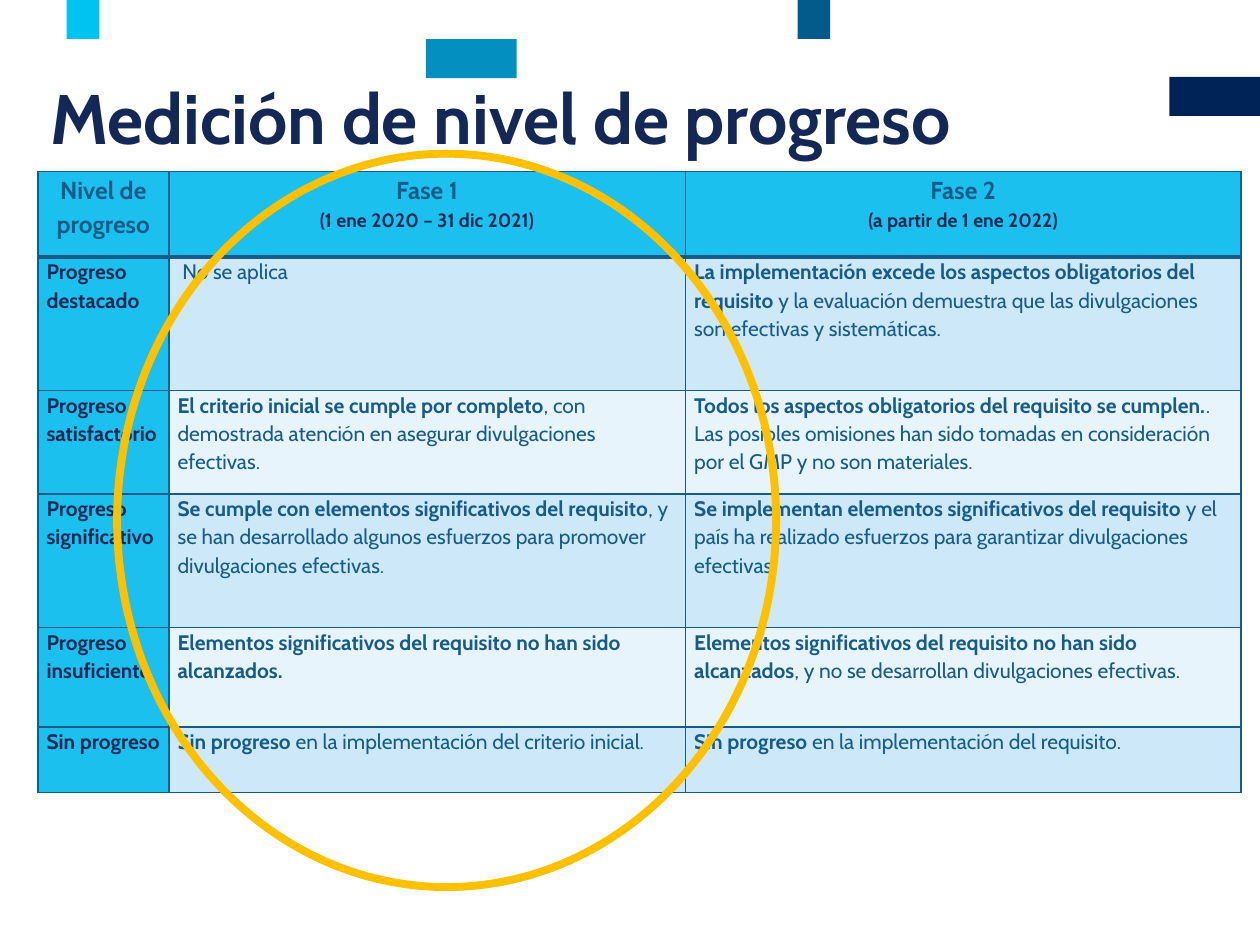
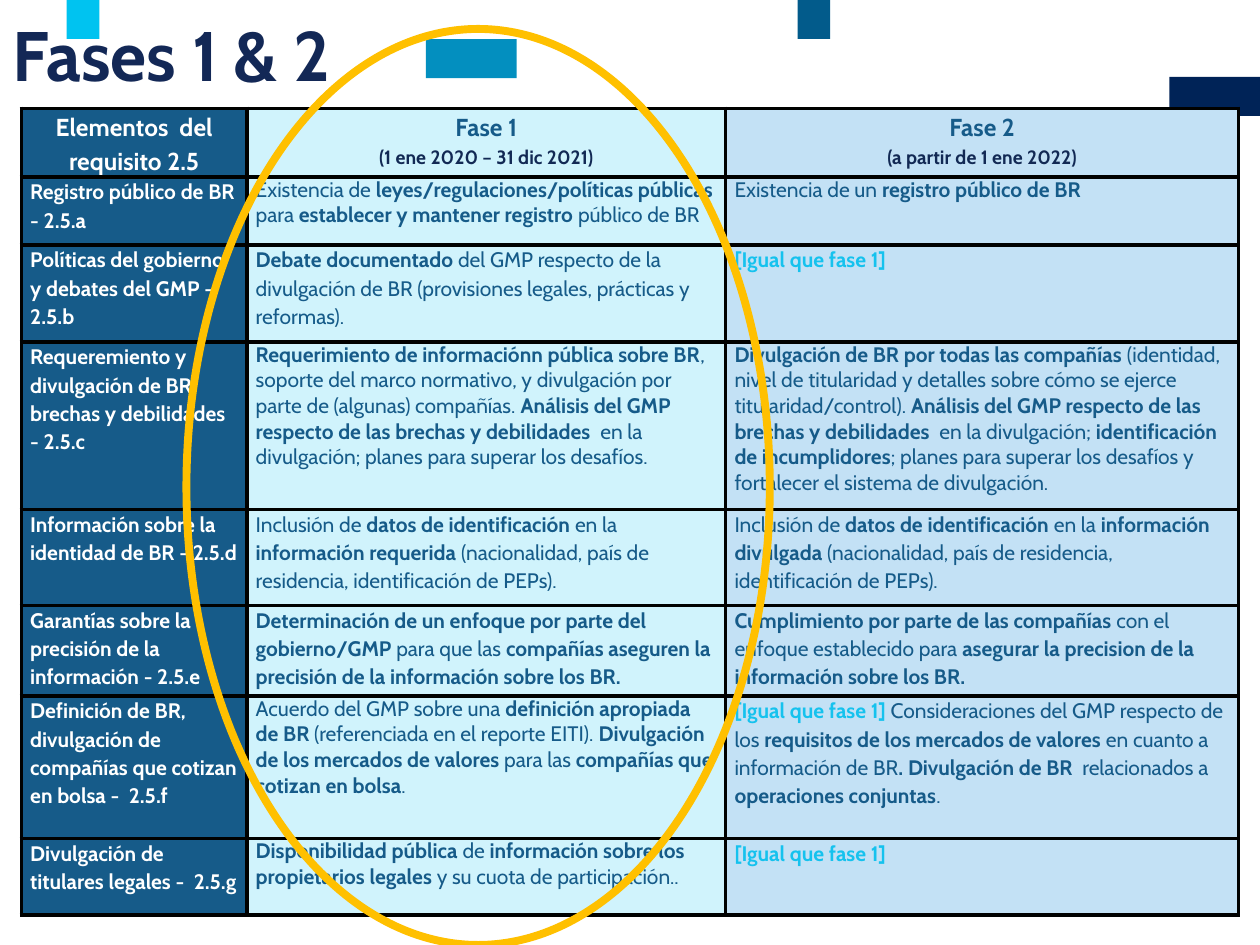
from pptx import Presentation
from pptx.util import Inches, Pt
from pptx.dml.color import RGBColor
from pptx.enum.shapes import MSO_SHAPE
from pptx.enum.text import PP_ALIGN, MSO_ANCHOR, MSO_AUTO_SIZE
from pptx.oxml.ns import qn
from lxml.etree import SubElement

FONT = "Cabin"
COLORS = {
    "title": "132856", "navy": "122954", "blue": "165B89", "cyan": "1CC0EE",
    "same": "15C2EE", "white": "FFFFFF", "black": "000100", "ring": "FFC000",
    "dark": "CDE8F8", "light": "E8F4FC", "phase1": "D0F3FC", "phase2": "C3E1F5",
    "band1": "002357", "band2": "025B8B", "band3": "038FBF", "band4": "00C3F0",
}
# Colour, left, top and width of the blocks at the top of every slide
BANDS = [("band1", 9.28, 0.61, 0.72), ("band2", 6.33, 0, 0.26),
         ("band3", 3.38, 0.31, 0.72), ("band4", 0.53, 0, 0.26)]
PHASES = ["Fase 1\n(1 ene 2020 – 31 dic 2021)", "Fase 2\n(a partir de 1 ene 2022)"]

# Bold passages stand between double asterisks
LEVELS = [
    ["Nivel de progreso", *PHASES],
    ["**Progreso destacado**", " No se aplica",
     "**La implementación excede los aspectos obligatorios del requisito **y la "
     "evaluación demuestra que las divulgaciones son efectivas y sistemáticas."],
    ["**Progreso satisfactorio**",
     "**El criterio inicial se cumple por completo**, con demostrada atención en "
     "asegurar divulgaciones efectivas.",
     "**Todos los aspectos obligatorios del requisito se cumplen.**. Las posibles "
     "omisiones han sido tomadas en consideración por el GMP y no son materiales."],
    ["**Progreso significativo**",
     "**Se cumple con elementos significativos del requisito**, y se han "
     "desarrollado algunos esfuerzos para promover divulgaciones efectivas.",
     "**Se implementan elementos significativos del requisito **y el país ha "
     "realizado esfuerzos para garantizar divulgaciones efectivas."],
    ["**Progreso insuficiente**",
     "**Elementos significativos del requisito no han sido alcanzados.**",
     "**Elementos significativos del requisito no han sido alcanzados**, y no se "
     "desarrollan divulgaciones efectivas."],
    ["**Sin progreso**",
     "**Sin progreso **en la implementación del criterio inicial.",
     "**Sin progreso **en la implementación del requisito."],
]
ITEMS = [
    ["Elementos  del requisito 2.5", *PHASES],
    ["**Registro público de BR - 2.5.a**",
     "Existencia de **leyes/regulaciones/políticas públicas **para **establecer y "
     "mantener registro **público de BR",
     "Existencia de un **registro público de BR**"],
    ["**Políticas del gobierno y debates del GMP - 2.5.b**",
     "**Debate documentado **del GMP respecto de la divulgación de BR "
     "(provisiones legales, prácticas y reformas).",
     "**[Igual que fase 1]**"],
    ["**Requeremiento y divulgación de BR: brechas y debilidades**\n**- 2.5.c**",
     "**Requerimiento de informaciónn pública sobre BR**, soporte del marco "
     "normativo, y divulgación por parte de (algunas) compañías. **Análisis del GMP "
     "respecto de las brechas y debilidades  **en la divulgación; planes para "
     "superar los desafíos.",
     "**Divulgación de BR por todas las compañías **(identidad, nivel de "
     "titularidad y detalles sobre cómo se ejerce titularidad/control). **Análisis "
     "del GMP respecto de las brechas y debilidades  **en la divulgación; "
     "**identificación de incumplidores**; planes para superar los desafíos y "
     "fortalecer el sistema de divulgación."],
    ["**Información sobre la identidad de BR - 2.5.d**",
     "Inclusión de **datos de identificación **en la **información requerida "
     "**(nacionalidad, país de residencia, identificación de PEPs).",
     "Inclusión de **datos de identificación **en la **información divulgada "
     "**(nacionalidad, país de residencia, identificación de PEPs)."],
    ["**Garantías sobre la precisión de la información - 2.5.e**",
     "**Determinación de un enfoque por parte del gobierno/GMP **para que las "
     "**compañías aseguren la precisión de la información sobre los BR.**",
     "**Cumplimiento por parte de las compañías **con el enfoque establecido para "
     "**asegurar la precision de la información sobre los BR.**"],
    ["**Definición de BR, divulgación de compañías que cotizan en bolsa -  2.5.f**",
     "Acuerdo del GMP sobre una **definición apropiada de BR** (referenciada en el "
     "reporte EITI). **Divulgación de los mercados de valores** para las "
     "**compañías que cotizan en bolsa**.",
     "**[Igual que fase 1] **Consideraciones del GMP respecto de los **requisitos "
     "de los mercados de valores **en cuanto a información de BR**. Divulgación de "
     "BR  **relacionados a **operaciones conjuntas**."],
    ["**Divulgación de titulares legales -  2.5.g**",
     "**Disponibilidad pública **de **información sobre los propietarios legales "
     "**y su cuota de participación..",
     "**[Igual que fase 1]**"],
]
# Cells of the second table set with single line spacing
TIGHT = {(1, 1), (1, 2), (3, 1), (3, 2), (6, 1), (7, 1)}


def rgb(name):
    return RGBColor.from_string(COLORS[name])


def write(para, text, size=12, color="blue", bold=False, align=PP_ALIGN.LEFT, gap=1.0):
    """Fill a paragraph; asterisk pairs switch bold, bold brackets turn cyan."""
    para.alignment, para.line_spacing = align, gap
    for i, part in enumerate(text.split("**")):
        if part:
            run = para.add_run()
            run.text = part
            font = run.font
            font.name, font.size = FONT, Pt(size)
            font.bold = bold or i % 2 == 1
            font.color.rgb = rgb("same" if part.startswith("[") else color)


def draw(slide, kind, box, fill=None, line=None):
    shape = slide.shapes.add_shape(kind, *map(Inches, box))
    shape.shadow.inherit = False
    if fill:
        shape.fill.solid()
        shape.fill.fore_color.rgb = rgb(fill)
    else:
        shape.fill.background()
    if line:
        shape.line.color.rgb = rgb(line)
        shape.line.width = Pt(4.5)
    else:
        shape.line.fill.background()
    return shape


def start(deck, text, box):
    """Add a slide with the blocks behind its title."""
    slide = deck.slides.add_slide(deck.slide_layouts[5])
    title = slide.shapes.title
    for color, left, top, width in BANDS:
        block = draw(slide, MSO_SHAPE.RECTANGLE, (left, top, width, 0.31), fill=color)
        title._element.addprevious(block._element)
    title.left, title.top, title.width, title.height = map(Inches, box)
    frame = title.text_frame
    frame.word_wrap, frame.auto_size = True, MSO_AUTO_SIZE.NONE
    frame.vertical_anchor = MSO_ANCHOR.TOP
    write(frame.paragraphs[0], text, size=40, color="title", bold=True, gap=0.89)
    return slide


def edge(cell, color, **widths):
    """Draw the cell's borders; widths are points for L, R, T and B."""
    props = cell._tc.get_or_add_tcPr()
    for side in "LRTB":
        line = SubElement(props, qn("a:ln" + side), w=str(Pt(widths[side])))
        fill = SubElement(line, qn("a:solidFill"))
        SubElement(fill, qn("a:srgbClr"), val=COLORS[color])


def grid(slide, box, data, cols, rows, look, line, width, rule):
    """Add a table; look(row, col) gives fill, text colour and line spacing."""
    table = slide.shapes.add_table(len(rows), len(cols), *map(Inches, box)).table
    table.first_row = table.horz_banding = False
    for col, size in zip(table.columns, cols):
        col.width = Inches(size)
    for row, size in zip(table.rows, rows):
        row.height = Inches(size)
    for r, texts in enumerate(data):
        for c, text in enumerate(texts):
            cell = table.cell(r, c)
            fill, color, gap = look(r, c)
            edge(cell, line, L=width, R=width, T=rule if r == 1 else width,
                 B=rule if r == 0 else width)
            cell.fill.solid()
            cell.fill.fore_color.rgb = rgb(fill)
            cell.margin_left = cell.margin_right = Inches(0.07)
            cell.margin_top = cell.margin_bottom = 0
            for i, words in enumerate(text.split("\n")):
                frame = cell.text_frame
                para = frame.add_paragraph() if i else frame.paragraphs[0]
                if r:
                    write(para, words, color=color, gap=gap)
                else:
                    write(para, words, size=11 if i else 14, bold=True,
                          color="navy" if i else color, align=PP_ALIGN.CENTER, gap=1.15)


def level(r, c):
    if r == 0:
        return "cyan", "blue", 1.15
    if c == 0:
        return "cyan", "navy", 1.1
    return ("dark" if r % 2 else "light"), "blue", 1.1


def item(r, c):
    fill = ("blue", "phase1", "phase2")[c]
    return fill, "blue" if c else "white", 1.0 if (r, c) in TIGHT else 1.1


def progress(deck):
    slide = start(deck, "Medición de nivel de progreso", (0.3, 0.62, 8.95, 0.73))
    grid(slide, (0.3, 1.36, 9.55, 4.92), LEVELS, [1.04, 4.1, 4.41],
         [0.68, 1.06, 0.82, 1.06, 0.79, 0.52], level, "blue", 1, 3)
    # Ring around the first phase
    draw(slide, MSO_SHAPE.OVAL, (0.93, 1.22, 5.23, 5.82), line="ring")


def phases(deck):
    slide = start(deck, "Fases 1 & 2", (0, 0.12, 8.95, 0.73))
    grid(slide, (0.17, 0.86, 9.66, 6.41), ITEMS, [1.79, 3.8, 4.07],
         [0.46, 0.54, 0.77, 1.33, 0.76, 0.72, 1.13, 0.61], item, "black", 2.25, 2.25)
    # Ring around the first phase
    draw(slide, MSO_SHAPE.OVAL, (1.48, 0.23, 4.63, 7.27), line="ring")


def main():
    deck = Presentation()
    deck.slide_width, deck.slide_height = Inches(10), Inches(7.5)
    progress(deck)
    phases(deck)
    deck.save("out.pptx")


if __name__ == "__main__":
    main()
